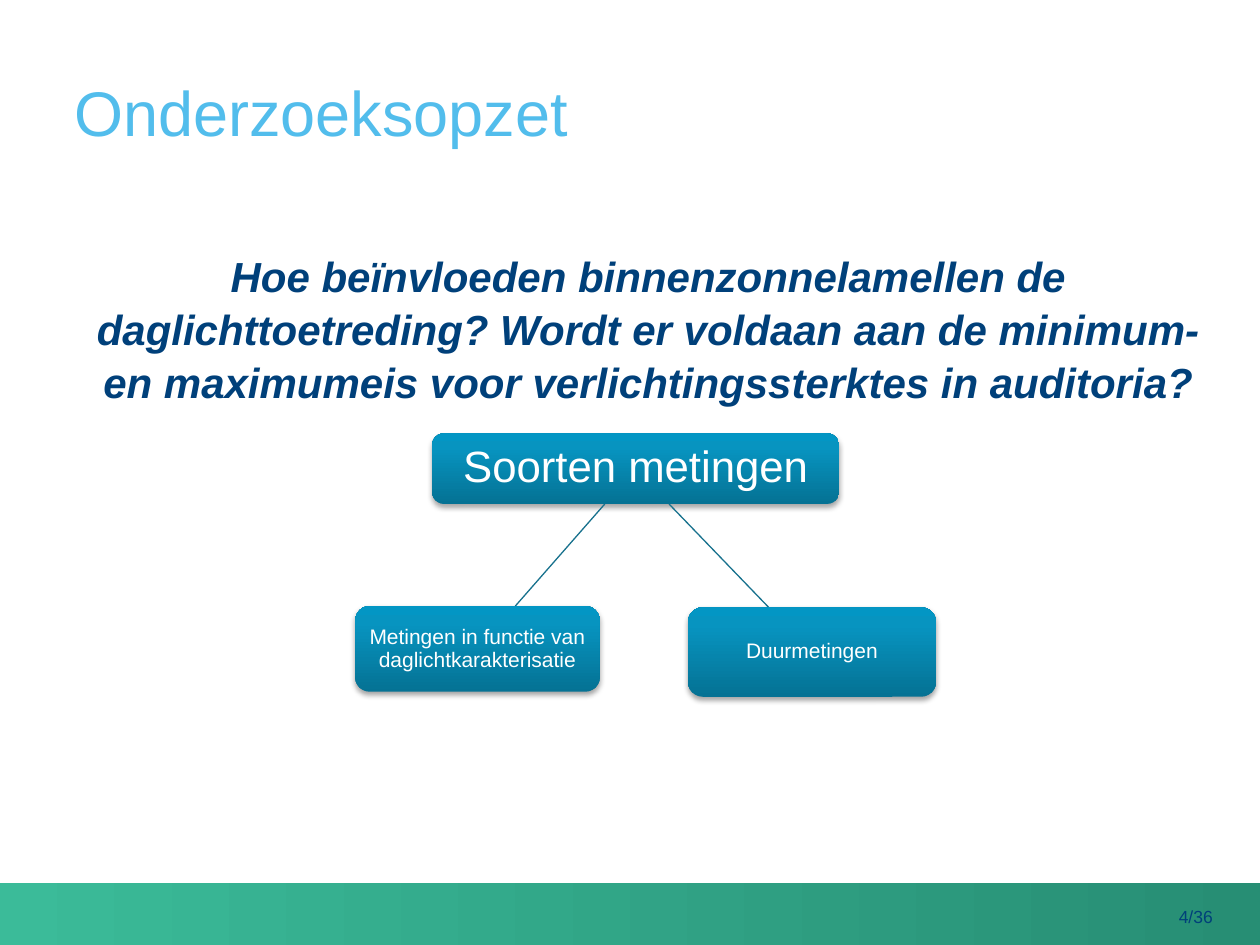
from lxml import etree
from pptx import Presentation
from pptx.dml.color import RGBColor
from pptx.enum.shapes import MSO_CONNECTOR as Link, MSO_SHAPE as Kind
from pptx.enum.text import MSO_ANCHOR as Anchor, PP_ALIGN as Align
from pptx.oxml import parse_xml
from pptx.oxml.ns import nsdecls, qn
from pptx.util import Inches, Pt

NAVY = "00407A"
SKY = "52BDEC"
TEAL = "17718D"
WHITE = "FFFFFF"
BLUES = [(0, "057294"), (80, "0794C0"), (100, "0396C4")]
GREENS = [(0, "3BBB99"), (100, "278E74")]


def color(code):
    return RGBColor.from_string(code)


def write(shape, text, size=12, tint=WHITE, bold=False, italic=False,
          align=Align.CENTER, anchor=Anchor.TOP, inset=0, lead=1.0):
    frame = shape.text_frame
    frame.word_wrap = True
    frame.vertical_anchor = anchor
    frame.margin_left = frame.margin_right = Inches(inset)
    frame.margin_top = frame.margin_bottom = Inches(inset)
    para = frame.paragraphs[0]
    para.alignment = align
    para.line_spacing = lead
    run = para.add_run()
    run.text = text
    font = run.font
    font.name = "Arial"
    font.size = Pt(size)
    font.bold = bold
    font.italic = italic
    font.color.rgb = color(tint)


def add_text(slide, box, text, **style):
    shape = slide.shapes.add_textbox(*map(Inches, box))
    write(shape, text, **style)


def add_panel(slide, kind, box, stops, angle):
    shape = slide.shapes.add_shape(kind, *map(Inches, box))
    marks = "".join(
        f'<a:gs pos="{pos * 1000}"><a:srgbClr val="{code}"/></a:gs>'
        for pos, code in stops)
    fill = parse_xml(
        f'<a:gradFill {nsdecls("a")} rotWithShape="1"><a:gsLst>{marks}</a:gsLst>'
        f'<a:lin ang="{angle * 60000}" scaled="0"/></a:gradFill>')
    shape.element.spPr.find(qn("a:prstGeom")).addnext(fill)
    shape.line.fill.background()
    shape.shadow.inherit = False
    return shape


def add_node(slide, box, text, size, inset):
    shape = add_panel(slide, Kind.ROUNDED_RECTANGLE, box, BLUES, 270)
    shade = parse_xml(
        f'<a:outerShdw {nsdecls("a")} blurRad="{Pt(3.1)}" dist="{Pt(1.8)}" '
        'dir="5400000" rotWithShape="0"><a:srgbClr val="000000">'
        '<a:alpha val="35000"/></a:srgbClr></a:outerShdw>')
    shape.element.spPr.find(qn("a:effectLst")).append(shade)
    write(shape, text, size=size, anchor=Anchor.MIDDLE, inset=inset, lead=0.9)


def add_line(slide, ends):
    line = slide.shapes.add_connector(Link.STRAIGHT, *map(Inches, ends))
    line.line.color.rgb = color(TEAL)
    line.line.width = Pt(0.75)
    etree.SubElement(line.element.spPr, qn("a:effectLst"))


def add_tree(slide, box):
    left, top, wide, high = box
    root = (left + 0.61, top, 3.23, 0.56)
    add_node(slide, root, "Soorten metingen", 25, 0.07)
    low = top + root[3]
    leaves = [
        ("Metingen in functie van daglichtkarakterisatie",
         (left, top + 1.37, 1.94, 0.68), 1.98, 1.27),
        ("Duurmetingen",
         (left + wide - 1.97, top + high - 0.71, 1.97, 0.71), 2.49, 3.28),
    ]
    for text, spot, start, end in leaves:
        add_line(slide, (left + start, low, left + end, spot[1]))
        add_node(slide, spot, text, 12, 0.06)


def add_footer(slide, box):
    left, top, wide, high = box
    add_panel(slide, Kind.RECTANGLE, box, GREENS, 0)
    add_text(slide, (left + wide - 1.02, top + 0.18, 1.02, high - 0.18),
             "4/36", size=10, tint=NAVY)


def main():
    deck = Presentation()
    deck.slide_width = Inches(10)
    deck.slide_height = Inches(7.5)
    slide = deck.slides.add_slide(deck.slide_layouts[6])
    add_footer(slide, (0, 7.01, 10, 0.49))
    add_text(slide, (0.59, 0.2, 9.11, 0.98), "Onderzoeksopzet", size=36,
             tint=SKY, align=Align.LEFT, anchor=Anchor.BOTTOM)
    add_text(slide, (0.59, 1.97, 9.11, 1.3),
             "Hoe beïnvloeden binnenzonnelamellen de daglichttoetreding? "
             "Wordt er voldaan aan de minimum- en maximumeis voor "
             "verlichtingssterktes in auditoria?",
             size=24, tint=NAVY, bold=True, italic=True, lead=1.05)
    add_tree(slide, (2.82, 3.44, 4.61, 2.09))
    deck.save("out.pptx")


if __name__ == "__main__":
    main()
